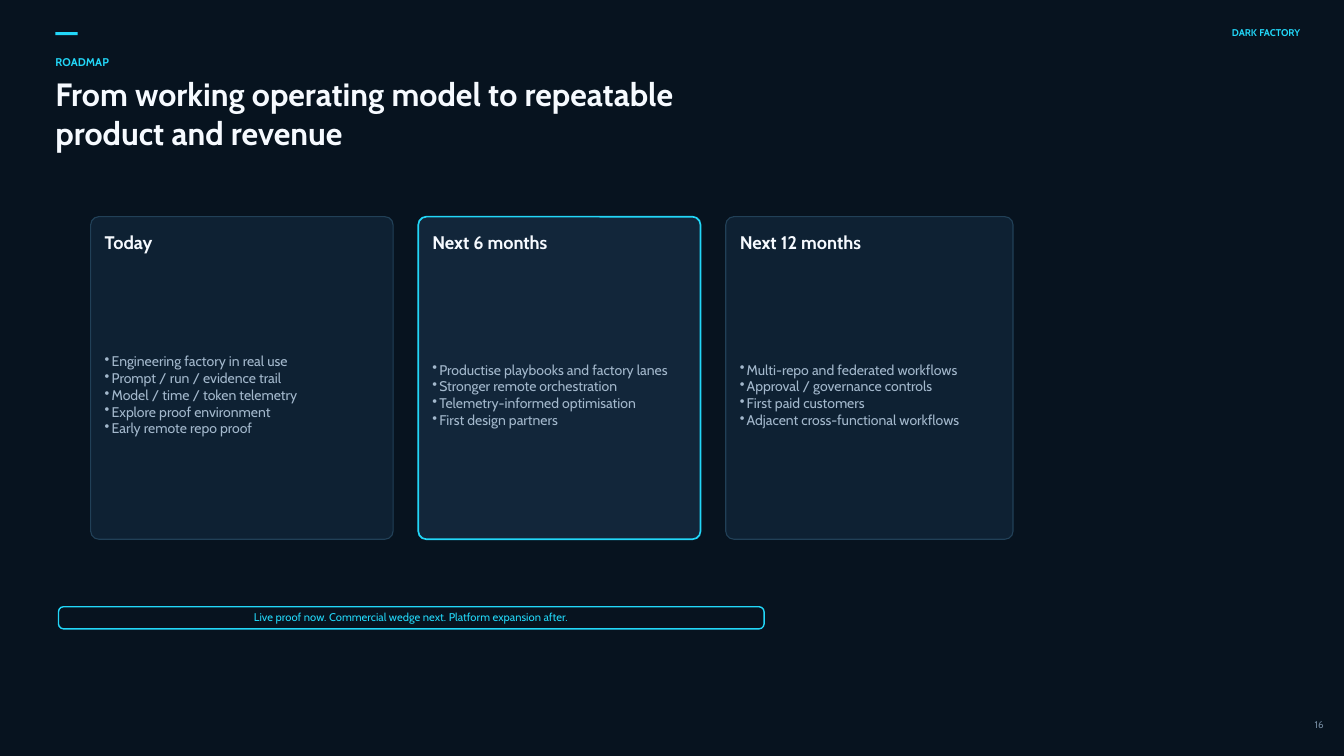
import dataclasses

import pptx
import pptx.dml.color
import pptx.enum.shapes
import pptx.enum.text
import pptx.oxml.ns
import pptx.util
from lxml import etree

Pt = pptx.util.Pt
RGB = pptx.dml.color.RGBColor.from_string
SHAPE = pptx.enum.shapes.MSO_SHAPE
ALIGN = pptx.enum.text.PP_ALIGN


@dataclasses.dataclass(frozen=True)
class Theme:
    font: str = "Cabin"
    night: str = "07131F"
    card: str = "0E2133"
    card_focus: str = "12263A"
    border: str = "214057"
    accent: str = "22D7F8"
    heading: str = "F6FAFF"
    body: str = "A3B8CC"
    muted: str = "6F859A"
    title_size: int = 23
    heading_size: int = 13
    body_size: int = 10
    label_size: int = 8
    small_size: int = 7


theme = Theme()


def write(text, left, top, width, height, size, color, bold=False,
          align=ALIGN.LEFT, bullet=False, holder=None):
    box = holder or slide.shapes.add_textbox(0, 0, 0, 0)
    box.left, box.top, box.width, box.height = Pt(left), Pt(top), Pt(width), Pt(height)
    frame = box.text_frame
    frame.word_wrap = True
    frame.auto_size = pptx.enum.text.MSO_AUTO_SIZE.NONE
    frame.vertical_anchor = pptx.enum.text.MSO_ANCHOR.MIDDLE
    frame.margin_left = frame.margin_right = frame.margin_top = frame.margin_bottom = 0
    frame.text = text
    for paragraph in frame.paragraphs:
        paragraph.alignment = align
        if bullet:
            properties = paragraph._p.get_or_add_pPr()
            properties.set("marL", str(Pt(5)))
            properties.set("indent", str(-Pt(5)))
            etree.SubElement(properties, pptx.oxml.ns.qn("a:buChar")).set("char", "•")
        font = paragraph.font
        font.name, font.size, font.bold = theme.font, Pt(size), bold
        font.color.rgb = RGB(color)


def panel(left, top, width, height, fill, border=None, weight=0, radius=0):
    kind = SHAPE.ROUNDED_RECTANGLE if radius else SHAPE.RECTANGLE
    shape = slide.shapes.add_shape(kind, Pt(left), Pt(top), Pt(width), Pt(height))
    shape.shadow.inherit = False
    shape.fill.solid()
    shape.fill.fore_color.rgb = RGB(fill)
    if radius:
        shape.adjustments[0] = radius / min(width, height)
    if border:
        shape.line.color.rgb = RGB(border)
        shape.line.width = Pt(weight)
    else:
        shape.line.fill.background()


deck = pptx.Presentation()
deck.slide_width, deck.slide_height = Pt(960), Pt(540)
slide = deck.slides.add_slide(deck.slide_layouts[5])
slide.background.fill.solid()
slide.background.fill.fore_color.rgb = RGB(theme.night)

margin = 39.6
panel(margin, 23, 15.8, 2.2, theme.accent)
write("DARK FACTORY", 871.2, 18, 57.6, 10, theme.small_size, theme.accent,
      bold=True, align=ALIGN.RIGHT)
write("16", 932.4, 512.6, 13, 10, theme.small_size, theme.muted, align=ALIGN.RIGHT)
write("ROADMAP", margin, 39.6, 151.2, 10, theme.label_size, theme.accent, bold=True)
write("From working operating model to repeatable product and revenue",
      margin, 52.6, 468, 56.2, theme.title_size, theme.heading,
      bold=True, holder=slide.shapes.title)

stages = [
    ("Today", 216, False, [
        "Engineering factory in real use",
        "Prompt / run / evidence trail",
        "Model / time / token telemetry",
        "Explore proof environment",
        "Early remote repo proof",
    ]),
    ("Next 6 months", 201.6, True, [
        "Productise playbooks and factory lanes",
        "Stronger remote orchestration",
        "Telemetry-informed optimisation",
        "First design partners",
    ]),
    ("Next 12 months", 205.2, False, [
        "Multi-repo and federated workflows",
        "Approval / governance controls",
        "First paid customers",
        "Adjacent cross-functional workflows",
    ]),
]
card_left, card_top, card_height, card_gap, padding = 64.8, 154.8, 230.4, 18, 10
milestones_middle, line_height = 281.9, 12
for stage, card_width, focus, milestones in stages:
    panel(card_left, card_top, card_width, card_height,
          theme.card_focus if focus else theme.card,
          border=theme.accent if focus else theme.border,
          weight=1.2 if focus else 0.8, radius=5.8)
    text_left, text_width = card_left + padding, card_width - 2 * padding
    write(stage, text_left, card_top + padding, text_width, 16,
          theme.heading_size, theme.heading, bold=True)
    list_height = line_height * len(milestones)
    write("\n".join(milestones), text_left, milestones_middle - list_height / 2,
          text_width, list_height, theme.body_size, theme.body, bullet=True)
    card_left += card_width + card_gap

panel(41.8, 433.4, 504, 15.8, theme.night, border=theme.accent, weight=1, radius=3.6)
write("Live proof now. Commercial wedge next. Platform expansion after.",
      50.4, 435.6, 486.7, 10, theme.label_size, theme.accent, align=ALIGN.CENTER)

deck.save("out.pptx")
